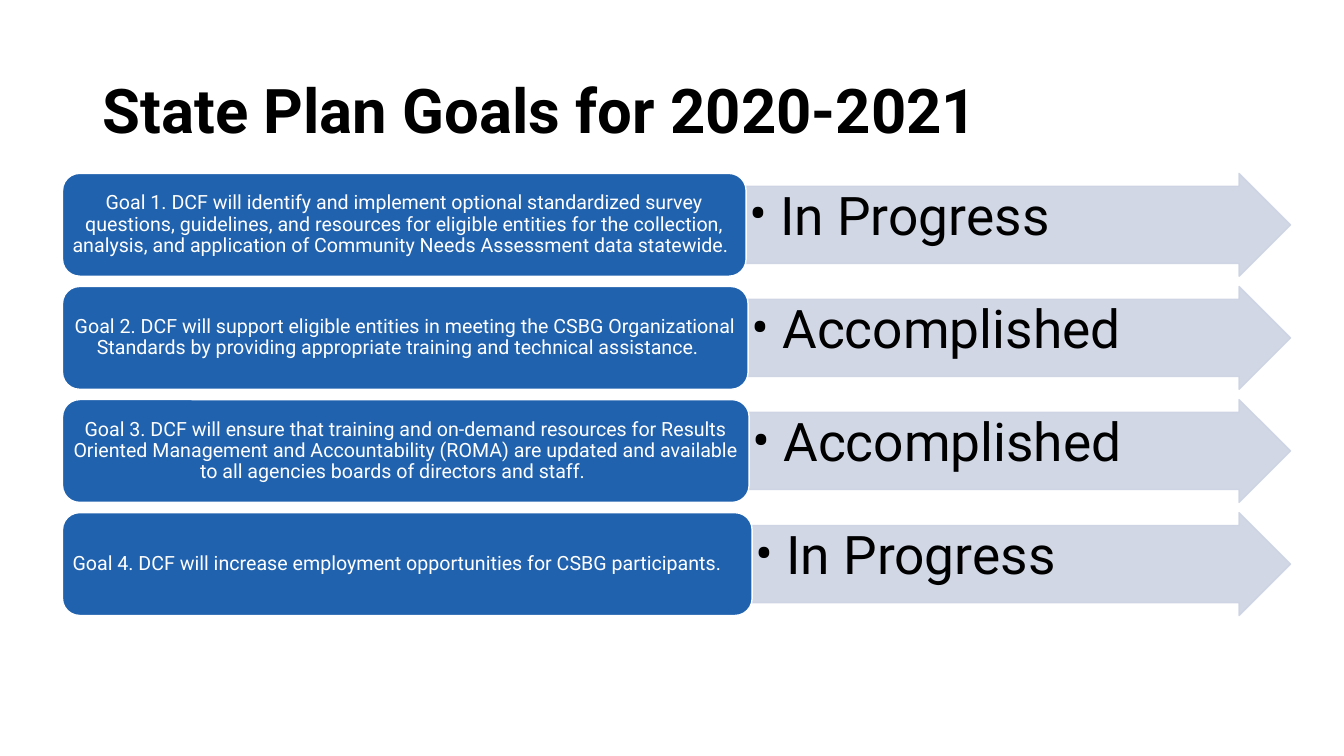
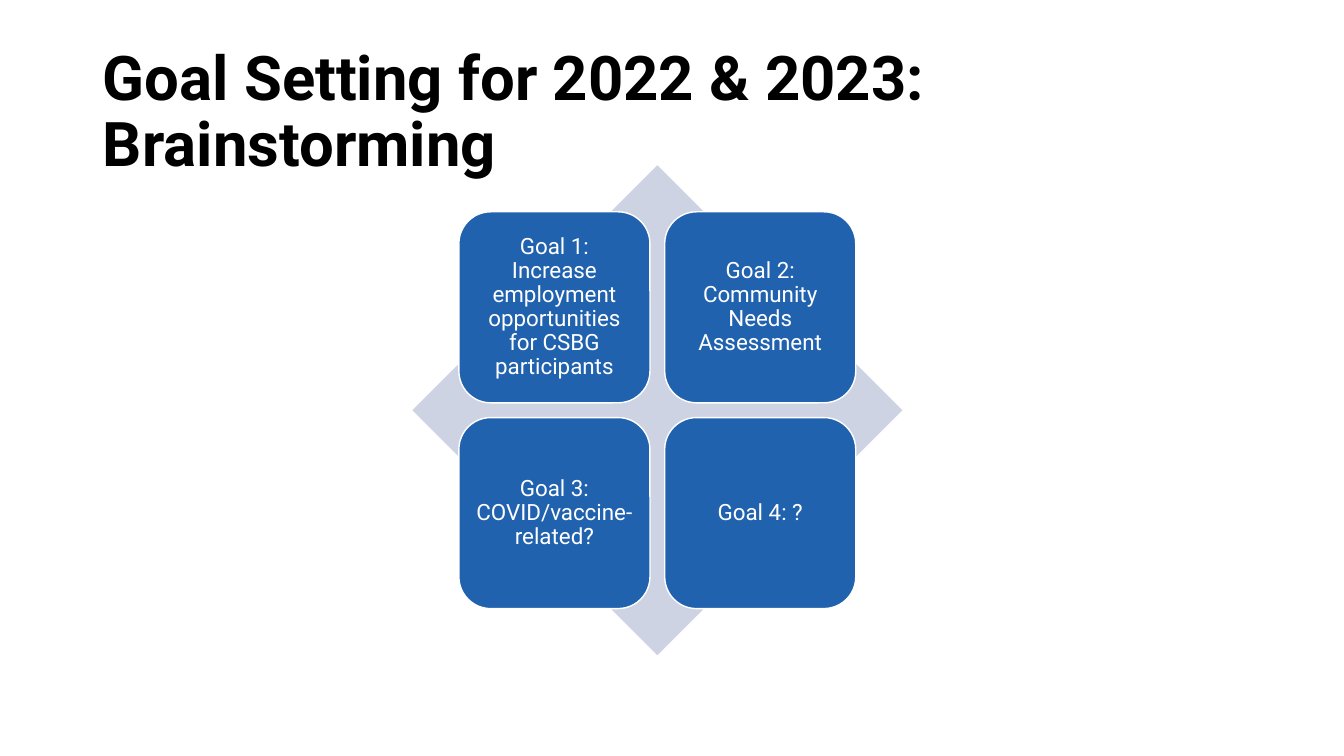
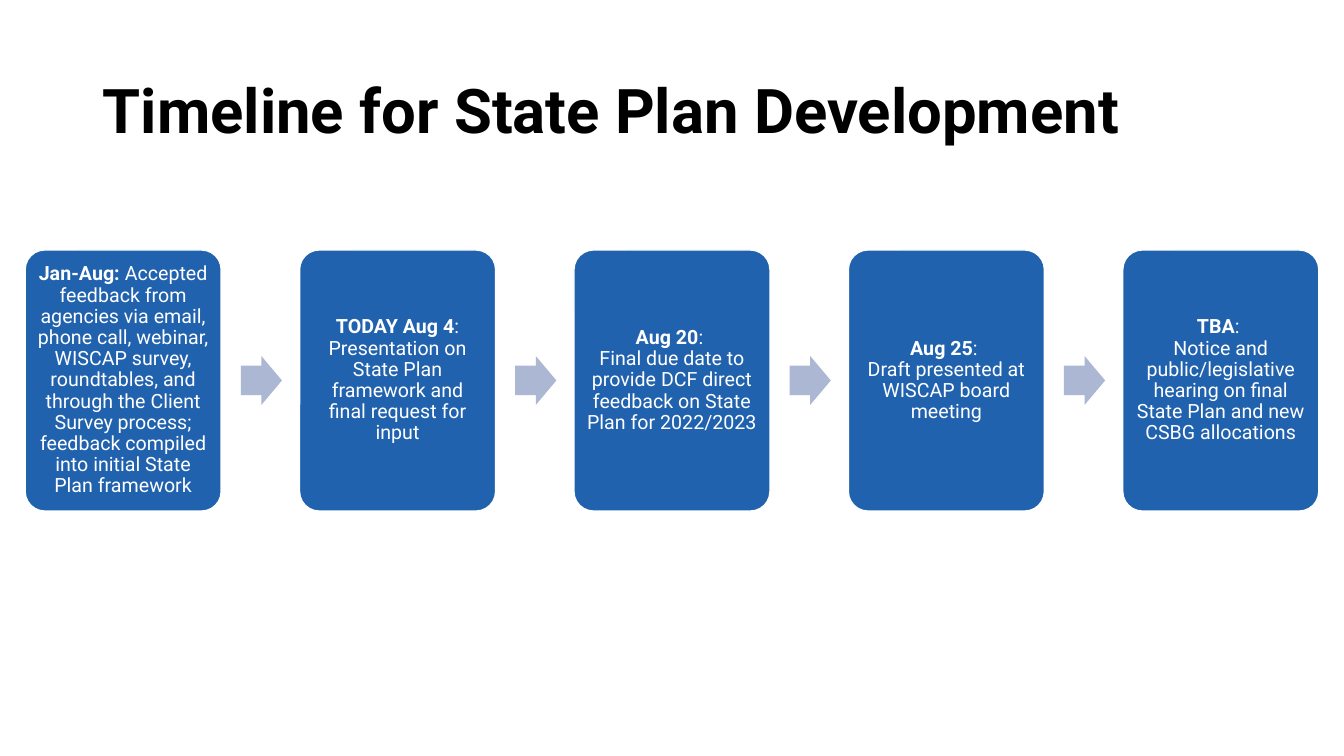
from pptx import Presentation
from pptx.dml.color import RGBColor
from pptx.enum.shapes import MSO_SHAPE as Preset
from pptx.enum.text import MSO_ANCHOR as Anchor, MSO_AUTO_SIZE as AutoSize, PP_ALIGN as Align
from pptx.oxml.ns import qn
from pptx.util import Inches, Pt
from lxml.etree import SubElement

WIDTH, HEIGHT = 13.33, 7.5
FONT = "Roboto"
BLACK, WHITE = "000000", "FFFFFF"
BLUE, PALE, MIST = "2162AE", "CDD3E3", "ACB7D3"

STATE_GOALS = [
    ("Goal 1. DCF will identify and implement optional standardized survey questions, "
     "guidelines, and resources for eligible entities for the collection, analysis, and "
     "application of Community Needs Assessment data statewide.", "In Progress", 7.4),
    ("Goal 2. DCF will support eligible entities in meeting the CSBG Organizational "
     "Standards by providing appropriate training and technical assistance.",
     "Accomplished", 7.42),
    ("Goal 3. DCF will ensure that training and on-demand resources for Results Oriented "
     "Management and Accountability (ROMA) are updated and available to all agencies "
     "boards of directors and staff.", "Accomplished", 7.43),
    ("Goal 4. DCF will increase employment opportunities for CSBG participants.",
     "In Progress", 7.46),
]
NEW_GOALS = [
    "Goal 1: Increase employment opportunities for CSBG participants",
    "Goal 2: Community Needs Assessment",
    "Goal 3: COVID/vaccine-related?",
    "Goal 4: ?",
]
MILESTONES = [
    ("Jan-Aug: ", "Accepted feedback from agencies via email, phone call, webinar, WISCAP "
     "survey, roundtables, and through the Client Survey process; feedback compiled into "
     "initial State Plan framework"),
    ("TODAY Aug 4", ": Presentation on State Plan framework and final request for input"),
    ("Aug 20", ": \nFinal due date to provide DCF direct feedback on State Plan for 2022/2023"),
    ("Aug 25", ": \nDraft presented at WISCAP board meeting"),
    ("TBA", ": \nNotice and public/legislative hearing on final State Plan and new CSBG "
     "allocations"),
]


def color(value):
    return RGBColor.from_string(value)


def style(paragraph, size, ink, align, bold=False):
    paragraph.alignment = align
    paragraph.line_spacing = 0.9
    font = paragraph.font
    font.name, font.size, font.bold = FONT, Pt(size), bold
    font.color.rgb = color(ink)


def add_slide(deck, heading):
    slide = deck.slides.add_slide(deck.slide_layouts[5])
    title = slide.shapes.title
    title.left, title.top = Inches(0.92), Inches(0.4)
    title.width, title.height = Inches(11.5), Inches(1.45)
    frame = title.text_frame
    frame.text = heading
    frame.word_wrap, frame.auto_size = True, AutoSize.NONE
    frame.vertical_anchor = Anchor.MIDDLE
    style(frame.paragraphs[0], 44, BLACK, Align.LEFT, bold=True)
    return slide


def add_block(slide, preset, box, fill, line=None, adjust=()):
    block = slide.shapes.add_shape(preset, *map(Inches, box))
    block.shadow.inherit = False
    block.fill.solid()
    block.fill.fore_color.rgb = color(fill)
    if line:
        block.line.color.rgb = color(line)
        block.line.width = Pt(1)
    else:
        block.line.fill.background()
    for index, value in enumerate(adjust):
        block.adjustments[index] = value
    return block


def prepare_text(block, anchor, side, end):
    frame = block.text_frame
    frame.word_wrap = True
    frame.vertical_anchor = anchor
    frame.margin_left = frame.margin_right = Inches(side)
    frame.margin_top = frame.margin_bottom = Inches(end)
    return frame.paragraphs[0]


def add_card(slide, box, parts, size, side, end, adjust=()):
    card = add_block(slide, Preset.ROUNDED_RECTANGLE, box, BLUE, WHITE, adjust)
    paragraph = prepare_text(card, Anchor.MIDDLE, side, end)
    paragraph._p.get_or_add_pPr().set("defTabSz", str(Inches(0.68)))
    for text, bold in parts:
        for number, row in enumerate(text.split("\n")):
            if number:
                paragraph.add_line_break()
            run = paragraph.add_run()
            run.text = row
            if bold:
                run.font.bold = True
    style(paragraph, size, WHITE, Align.CENTER)


def add_status(slide, box, status):
    arrow = add_block(slide, Preset.RIGHT_ARROW, box, PALE, PALE, (0.75, 0.5))
    for tint in arrow._element.spPr.iter(qn("a:srgbClr")):
        SubElement(tint, qn("a:alpha"), val="90000")
    paragraph = prepare_text(arrow, Anchor.TOP, 0.03, 0.03)
    paragraph.add_run().text = status
    properties = paragraph._p.get_or_add_pPr()
    properties.set("marL", str(Inches(0.31)))
    properties.set("indent", str(-Inches(0.31)))
    SubElement(properties, qn("a:buFont"), typeface=FONT)
    SubElement(properties, qn("a:buChar"), char="•")
    style(paragraph, 38, BLACK, Align.LEFT)


def build_goals(deck):
    slide = add_slide(deck, "State Plan Goals for 2020-2021")
    left, right, top, height = 0.62, 12.8, 1.72, 1.02
    for row, (goal, status, split) in enumerate(STATE_GOALS):
        y = top + row * height * 1.1
        add_status(slide, (split, y, right - split, height), status)
        add_card(slide, (left, y, split - left, height), [(goal + " \t", False)],
                 14, 0.05, 0.03)


def build_brainstorming(deck):
    slide = add_slide(deck, "Goal Setting for 2022 & 2023: Brainstorming")
    left, top, side = 4.09, 1.64, 4.86
    add_block(slide, Preset.DIAMOND, (left, top, side, side), PALE)
    card, pitch, offset = 0.39 * side, 0.42 * side, 0.095 * side
    for index, goal in enumerate(NEW_GOALS):
        row, column = divmod(index, 2)
        box = (left + offset + column * pitch, top + offset + row * pitch, card, card)
        add_card(slide, box, [(goal, False)], 16, 0.07, 0.07)


def build_timeline(deck):
    slide = add_slide(deck, "Timeline for State Plan Development")
    margin, top, height = 0.25, 2.48, 2.59
    gap_share = 0.4
    count = len(MILESTONES)
    width = (WIDTH - 2 * margin) / (count + (count - 1) * gap_share)
    arrow_width, arrow_height = 0.21 * width, 0.25 * width
    for index, (date, event) in enumerate(MILESTONES):
        x = margin + index * width * (1 + gap_share)
        if index:
            arrow_x = x - 0.3 * width
            arrow_y = top + (height - arrow_height) / 2
            add_block(slide, Preset.RIGHT_ARROW,
                      (arrow_x, arrow_y, arrow_width, arrow_height), MIST,
                      adjust=(0.6, 0.5))
        add_card(slide, (x, top, width, height), [(date, True), (event, False)],
                 14, 0.06, 0.06, (0.1,))


def main():
    deck = Presentation()
    deck.slide_width, deck.slide_height = Inches(WIDTH), Inches(HEIGHT)
    build_goals(deck)
    build_brainstorming(deck)
    build_timeline(deck)
    deck.save("out.pptx")


if __name__ == "__main__":
    main()
